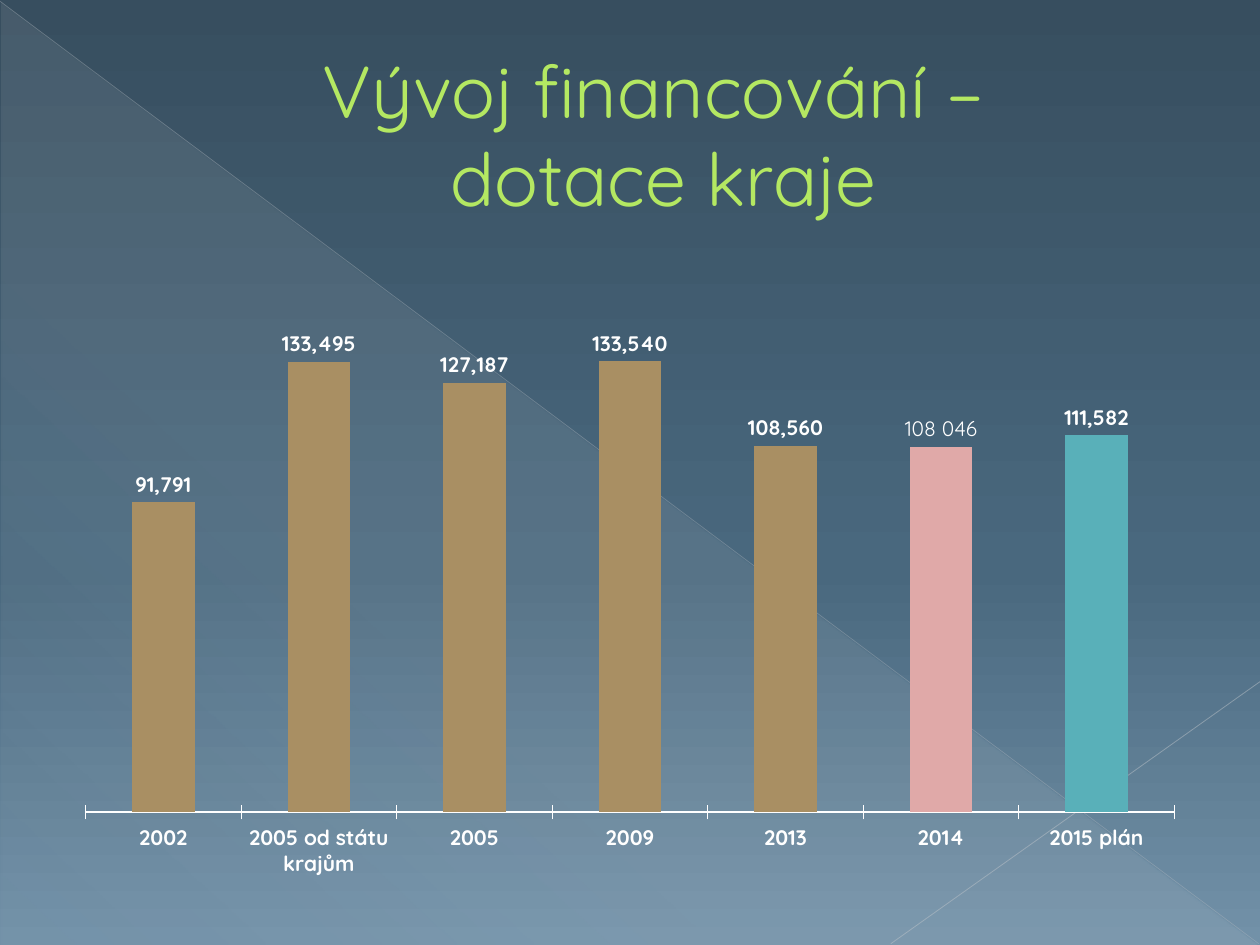
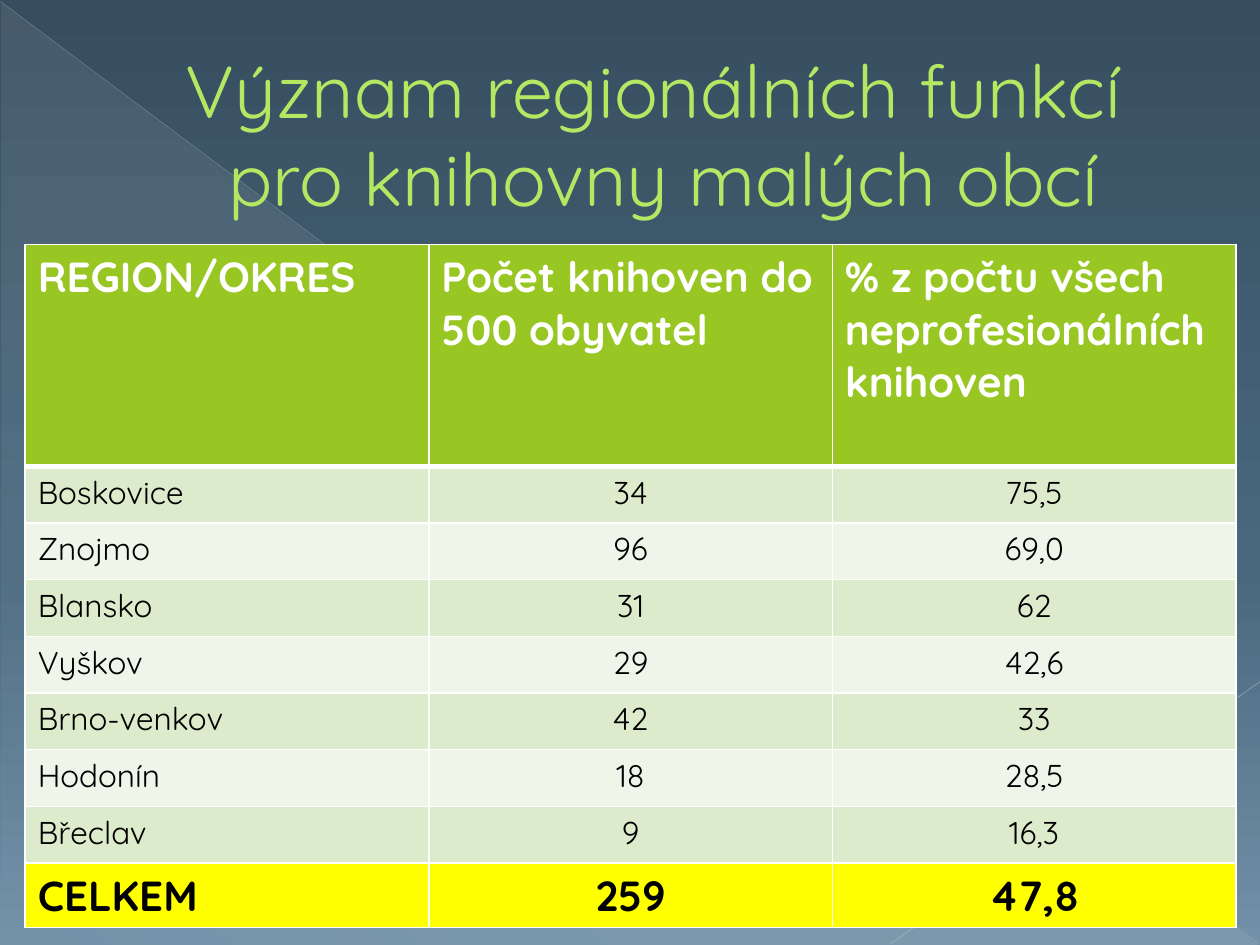
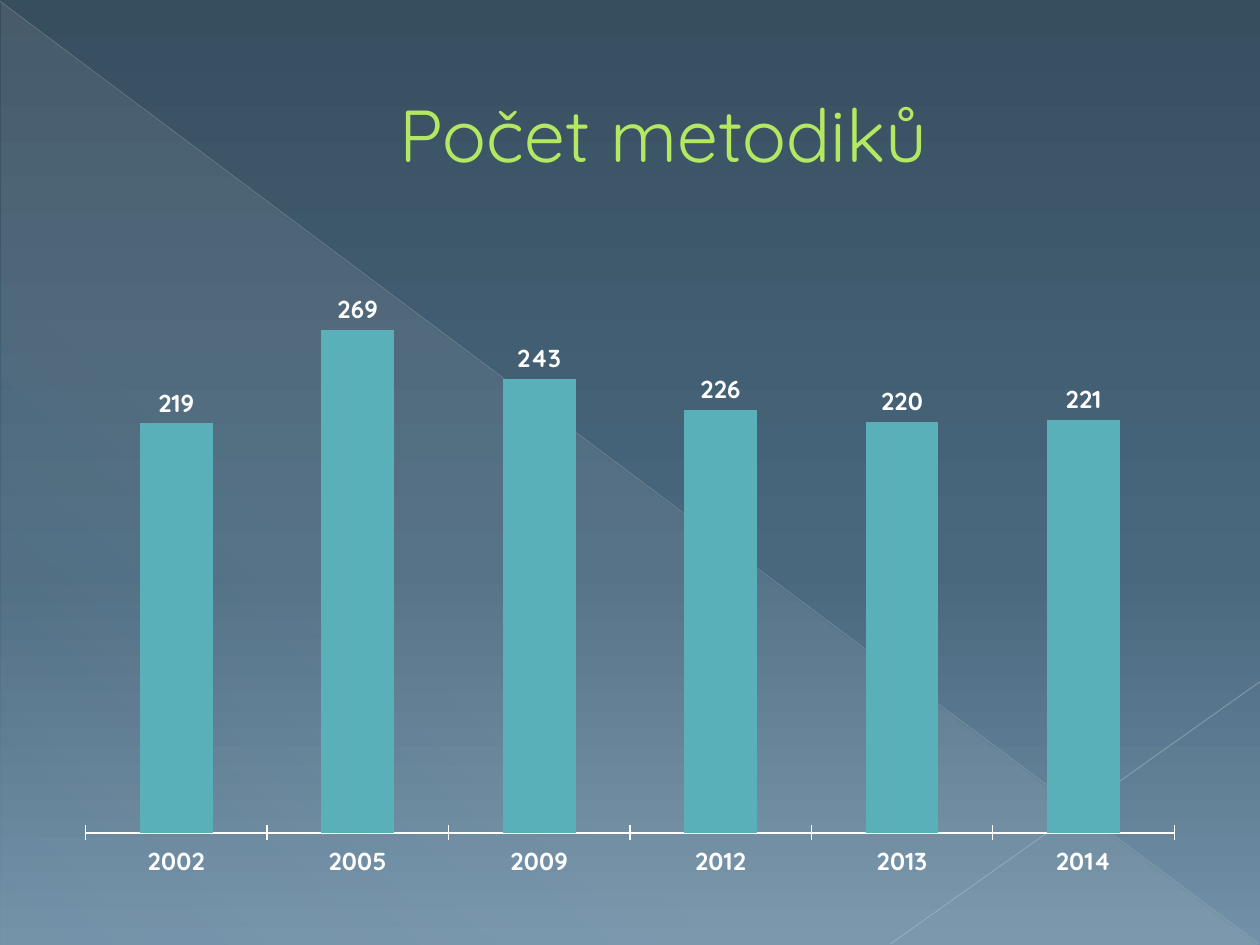
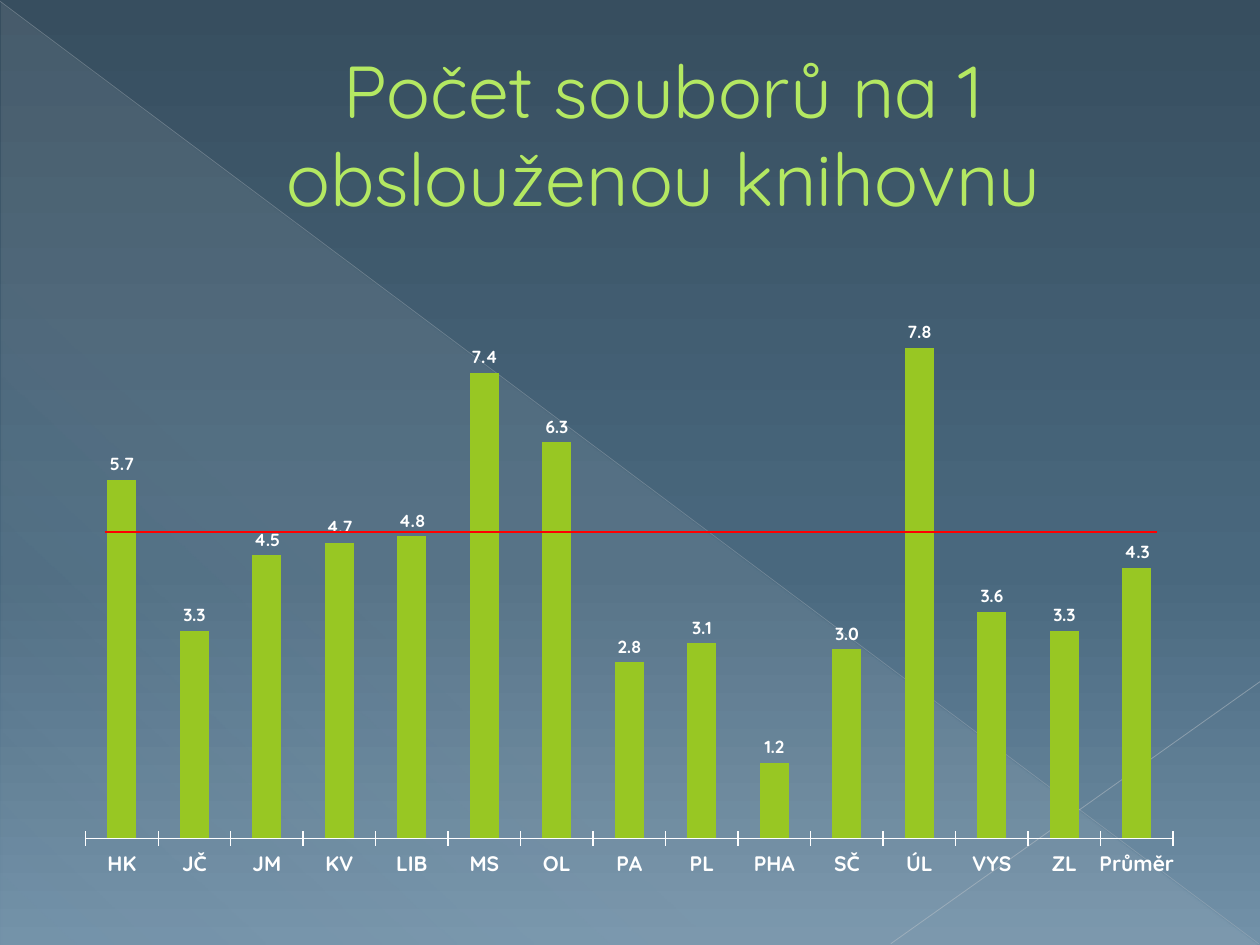
from lxml import etree
from pptx import Presentation, util as u
from pptx.chart.data import CategoryChartData
from pptx.dml.color import RGBColor
from pptx.enum import chart as charts, shapes, text
from pptx.oxml.ns import qn

FONT = "Quicksand"
WHITE, BLACK, RED, YELLOW = "FFFFFF", "000000", "FF0000", "FFFF00"
GREEN, TEAL, BROWN, PINK = "98C723", "59B0B9", "A98F63", "E0A9A8"
TITLE_FILL, TITLE_OUTLINE = "B4E862", "698A18"
BANDS = ("DDEBCD", "EFF5E8")
BACKGROUND = [(0, "374E5F", 100), (60, "49687E", 100), (100, "7291A8", 100)]
SHEEN = [(0, "E7ECED", 10), (70, "E7ECED", 8), (100, "E7ECED", 1)]


def color(value):
    return RGBColor.from_string(value)


def add_child(parent, tag, **attributes):
    return etree.SubElement(parent, qn(tag), {k: str(v) for k, v in attributes.items()})


def add_solid(parent, value):
    add_child(add_child(parent, "a:solidFill"), "a:srgbClr", val=value)


def set_gradient(fill, element, stops, angle):
    """Fill with stops of (position %, colour, opacity %), angle in clockwise degrees."""
    fill.gradient()
    gradient = element.xpath(".//a:gradFill")[0]
    for child in list(gradient):
        gradient.remove(child)
    stop_list = add_child(gradient, "a:gsLst")
    for position, value, opacity in stops:
        stop = add_child(stop_list, "a:gs", pos=position * 1000)
        stop_color = add_child(stop, "a:srgbClr", val=value)
        if opacity < 100:
            add_child(stop_color, "a:alpha", val=opacity * 1000)
    add_child(gradient, "a:lin", ang=angle * 60000, scaled=0)


def set_font(font, size, value, bold=False):
    font.name, font.size, font.bold = FONT, u.Pt(size), bold
    font.color.rgb = color(value)


def set_borders(cell, bottom_width):
    """White cell borders; widths in points. They must precede the fill."""
    properties = cell._tc.get_or_add_tcPr()
    for side in ("L", "R", "T", "B"):
        width = bottom_width if side == "B" else 1
        add_solid(add_child(properties, f"a:ln{side}", w=u.Pt(width)), WHITE)


class Deck:
    """Holds the presentation, its style and the current slide."""

    def __init__(self):
        self.presentation = Presentation()
        self.presentation.slide_width = u.Inches(10)
        self.presentation.slide_height = u.Inches(7.5)
        self.slide = None

    def add_slide(self, title):
        self.slide = self.presentation.slides.add_slide(self.presentation.slide_layouts[6])
        set_gradient(self.slide.background.fill, self.slide.element, BACKGROUND, 90)
        triangle = self.slide.shapes.add_shape(
            shapes.MSO_SHAPE.RIGHT_TRIANGLE,
            u.Inches(0.01), u.Inches(0.02), u.Inches(9.98), u.Inches(7.48))
        triangle.shadow.inherit = False
        triangle.line.fill.background()
        set_gradient(triangle.fill, triangle.element, SHEEN, 133)
        self.add_line((0, 0.01), (9.99, 7.49), "BAC0C6", 0.39, 35)
        self.add_line((10, 5.41), (7.07, 7.49), "C2C7CC", 0.47, 45)
        self.add_title(title)

    def add_line(self, start, end, value, width, opacity=100):
        line = self.slide.shapes.add_connector(
            shapes.MSO_CONNECTOR.STRAIGHT, *(u.Inches(n) for n in (*start, *end)))
        line.line.width = u.Pt(width)
        line.line.color.rgb = color(value)
        if opacity < 100:
            add_child(line.element.xpath(".//a:srgbClr")[0], "a:alpha", val=opacity * 1000)
        add_child(line.element.spPr, "a:effectLst")

    def add_title(self, title):
        box = self.slide.shapes.add_textbox(
            u.Inches(0.5), u.Inches(0.29), u.Inches(9), u.Inches(1.53))
        frame = box.text_frame
        frame.word_wrap = True
        frame.vertical_anchor = text.MSO_ANCHOR.MIDDLE
        frame.text = title
        paragraph = frame.paragraphs[0]
        paragraph.alignment = text.PP_ALIGN.CENTER
        properties = paragraph._p.get_or_add_pPr()
        properties.set("marL", str(u.Inches(0.53)))
        properties.set("indent", "0")
        for run in paragraph.runs:
            set_font(run.font, 42, TITLE_FILL)
            outline = etree.Element(qn("a:ln"), w=str(u.Pt(0.5)))
            add_solid(outline, TITLE_OUTLINE)
            run._r.get_or_add_rPr().insert(0, outline)

    def add_column_chart(self, categories, values, fill, maximum, number_format,
                         axis_size, label_size):
        data = CategoryChartData()
        data.categories = categories
        data.add_series("Series 1", values)
        chart = self.slide.shapes.add_chart(
            charts.XL_CHART_TYPE.COLUMN_CLUSTERED,
            u.Inches(0.5), u.Inches(2.06), u.Inches(9), u.Inches(5), data).chart
        chart.has_legend = chart.has_title = False
        set_font(chart.font, 10, WHITE)

        category_axis, value_axis = chart.category_axis, chart.value_axis
        category_axis.major_tick_mark = charts.XL_TICK_MARK.CROSS
        category_axis.format.line.color.rgb = color(WHITE)
        category_axis.format.line.width = u.Pt(0.75)
        set_font(category_axis.tick_labels.font, axis_size, WHITE, True)
        value_axis.visible = value_axis.has_major_gridlines = False
        value_axis.minimum_scale, value_axis.maximum_scale = 0, maximum
        value_axis.tick_labels.number_format = number_format
        value_axis.tick_labels.number_format_is_linked = False

        plot = chart.plots[0]
        plot.gap_width, plot.vary_by_categories = 150, False
        series = plot.series[0]
        series.format.fill.solid()
        series.format.fill.fore_color.rgb = color(fill)
        labels = series.data_labels
        labels.show_value = True
        labels.number_format, labels.number_format_is_linked = number_format, False
        labels.position = charts.XL_LABEL_POSITION.OUTSIDE_END
        set_font(labels.font, label_size, WHITE, True)
        return series

    def highlight_point(self, series, index, fill, label=None):
        point = series.points[index]
        point.format.fill.solid()
        point.format.fill.fore_color.rgb = color(fill)
        if label:
            frame = point.data_label.text_frame
            frame.text = label
            set_font(frame.paragraphs[0].runs[0].font, 12, WHITE)
            point.data_label.position = charts.XL_LABEL_POSITION.OUTSIDE_END

    def add_table(self, rows):
        """Header first, banded rows, total last."""
        last = len(rows) - 1
        heights = [1.76] + [0.45] * (last - 1) + [0.51]
        table = self.slide.shapes.add_table(
            len(rows), len(rows[0]), u.Inches(0.2), u.Inches(1.94),
            u.Inches(9.61), u.Inches(sum(heights))).table
        for row_index, row in enumerate(rows):
            table.rows[row_index].height = u.Inches(heights[row_index])
            header, total = row_index == 0, row_index == last
            fill = GREEN if header else YELLOW if total else BANDS[(row_index - 1) % 2]
            for column_index, value in enumerate(row):
                cell = table.cell(row_index, column_index)
                set_borders(cell, 3 if header else 1)
                cell.fill.solid()
                cell.fill.fore_color.rgb = color(fill)
                cell.text_frame.text = value
                paragraph = cell.text_frame.paragraphs[0]
                if column_index and not header:
                    paragraph.alignment = text.PP_ALIGN.CENTER
                emphasis = header or total
                set_font(paragraph.runs[0].font, 24 if emphasis else 18,
                         WHITE if header else BLACK, emphasis)


def main():
    deck = Deck()

    deck.add_slide("Vývoj financování – \vdotace kraje")
    funding = deck.add_column_chart(
        ["2002", "2005 od státu krajům", "2005", "2009", "2013", "2014", "2015 plán"],
        [91791, 133495, 127187, 133540, 108560, 108179, 111582],
        BROWN, 160000, "#,##0", 12, 12)
    deck.highlight_point(funding, 5, PINK, "108 046")
    deck.highlight_point(funding, 6, TEAL)

    deck.add_slide("Význam regionálních funkcí \vpro knihovny malých obcí")
    deck.add_table([
        ("REGION/OKRES", "Počet knihoven do 500 obyvatel",
         "% z počtu všech neprofesionálních knihoven"),
        ("Boskovice", "34", "75,5"),
        ("Znojmo", "96", "69,0"),
        ("Blansko", "31", "62"),
        ("Vyškov", "29", "42,6"),
        ("Brno-venkov", "42", "33"),
        ("Hodonín", "18", "28,5"),
        ("Břeclav", "9", "16,3"),
        ("CELKEM", "259", "47,8"),
    ])

    deck.add_slide("Počet metodiků")
    deck.add_column_chart(
        ["2002", "2005", "2009", "2012", "2013", "2014"],
        [219, 269, 243, 226, 220, 221], TEAL, 300, "0", 14, 14)

    deck.add_slide("Počet souborů na 1 obslouženou knihovnu")
    deck.add_column_chart(
        ["HK", "JČ", "JM", "KV", "LIB", "MS", "OL", "PA", "PL", "PHA", "SČ", "ÚL",
         "VYS", "ZL", "Průměr"],
        [5.7, 3.3, 4.5, 4.7, 4.8, 7.4, 6.3, 2.8, 3.1, 1.2, 3.0, 7.8, 3.6, 3.3, 4.3],
        GREEN, 9, "0.0", 12, 10)
    deck.add_line((0.83, 4.22), (9.18, 4.22), RED, 1)

    deck.presentation.save("out.pptx")


if __name__ == "__main__":
    main()
